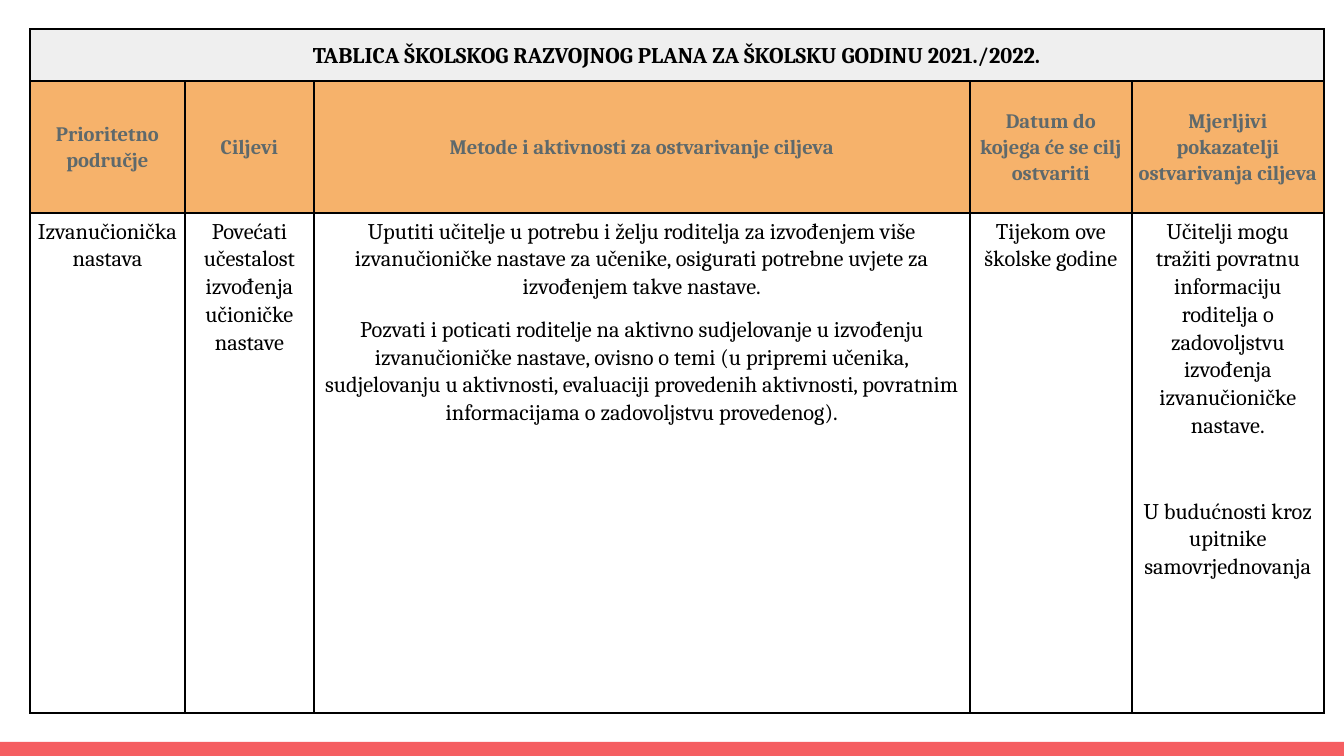
"""Builds a slide with the school development plan table."""
from lxml import etree
from pptx import Presentation
from pptx import util as u
from pptx.dml.color import RGBColor
from pptx.enum import shapes, text
from pptx.oxml import ns

CORAL = RGBColor(0xF5, 0x5E, 0x61)
ORANGE = RGBColor(0xF6, 0xB2, 0x6B)
LIGHT_GREY = RGBColor(0xEF, 0xEF, 0xEF)
SLATE = RGBColor(0x5E, 0x69, 0x6C)
BLACK = RGBColor(0, 0, 0)
WHITE = RGBColor(0xFF, 0xFF, 0xFF)

WIDTH, HEIGHT = 1344, 756
SCALE = u.Inches(10) / WIDTH

COLUMNS = [155, 129, 656, 162, 192]
ROWS = [52, 132, 500]
TITLE = "TABLICA ŠKOLSKOG RAZVOJNOG PLANA ZA ŠKOLSKU GODINU 2021./2022."
HEADINGS = [
    "Prioritetno područje",
    "Ciljevi",
    "Metode i aktivnosti za ostvarivanje ciljeva",
    "Datum do kojega će se cilj ostvariti",
    "Mjerljivi pokazatelji ostvarivanja ciljeva",
]
PLAN = [
    ["Izvanučionička nastava"],
    ["Povećati učestalost izvođenja učioničke nastave"],
    ["Uputiti učitelje u potrebu i želju roditelja za izvođenjem više "
     "izvanučioničke nastave za učenike, osigurati potrebne uvjete za "
     "izvođenjem takve nastave.",
     "Pozvati i poticati roditelje na aktivno sudjelovanje u izvođenju "
     "izvanučioničke nastave, ovisno o temi (u pripremi učenika, "
     "sudjelovanju u aktivnosti, evaluaciji provedenih aktivnosti, povratnim "
     "informacijama o zadovoljstvu provedenog)."],
    ["Tijekom ove školske godine"],
    ["Učitelji mogu tražiti povratnu informaciju roditelja o zadovoljstvu "
     "izvođenja izvanučioničke nastave.",
     "U budućnosti kroz upitnike samovrjednovanja"],
]
PARAGRAPH_GAPS = [8, 8, 8, 8, 31]


def px(length):
    return u.Emu(round(length * SCALE))


class SlideBuilder:
    """Holds the style and the current slide."""

    font = "Cambria"
    line_spacing = 1.08
    space_after = u.Pt(8)
    border_width = u.Pt(1)

    def __init__(self, presentation):
        self.slide = presentation.slides.add_slide(presentation.slide_layouts[6])

    def bar(self, left, top, width, height, color):
        shape = self.slide.shapes.add_shape(
            shapes.MSO_SHAPE.RECTANGLE, px(left), px(top), px(width), px(height))
        shape.shadow.inherit = False
        shape.fill.solid()
        shape.fill.fore_color.rgb = color
        shape.line.fill.background()

    def table(self, left, top, columns, rows):
        table = self.slide.shapes.add_table(
            len(rows), len(columns), px(left), px(top),
            px(sum(columns)), px(sum(rows))).table
        table.first_row = table.horz_banding = False
        for column, width in zip(table.columns, columns):
            column.width = px(width)
        for row, height in zip(table.rows, rows):
            row.height = px(height)
        for cell in table.iter_cells():
            self.borders(cell)
        return table

    def borders(self, cell):
        properties = cell._tc.get_or_add_tcPr()
        for index, side in enumerate(("lnL", "lnR", "lnT", "lnB")):
            line = etree.Element(ns.qn(f"a:{side}"), w=str(self.border_width))
            fill = etree.SubElement(line, ns.qn("a:solidFill"))
            etree.SubElement(fill, ns.qn("a:srgbClr"), val=str(BLACK))
            properties.insert(index, line)

    def cell(self, cell, paragraphs, fill, color=BLACK, size=12, bold=False,
             anchor=text.MSO_ANCHOR.MIDDLE, gap=8):
        cell.fill.solid()
        cell.fill.fore_color.rgb = fill
        cell.vertical_anchor = anchor
        cell.margin_left = cell.margin_right = px(5)
        cell.margin_top = cell.margin_bottom = px(4)
        frame = cell.text_frame
        for index, content in enumerate(paragraphs):
            paragraph = frame.add_paragraph() if index else frame.paragraphs[0]
            paragraph.alignment = text.PP_ALIGN.CENTER
            paragraph.line_spacing = self.line_spacing
            paragraph.space_before = u.Pt(gap if index else 0)
            last = index == len(paragraphs) - 1
            paragraph.space_after = self.space_after if last else u.Pt(0)
            run = paragraph.add_run()
            run.text = content
            run.font.name = self.font
            run.font.size = u.Pt(size)
            run.font.bold = bold
            run.font.color.rgb = color


def main():
    presentation = Presentation()
    presentation.slide_width = px(WIDTH)
    presentation.slide_height = px(HEIGHT)
    builder = SlideBuilder(presentation)

    builder.bar(0, 742, WIDTH, 14, CORAL)
    table = builder.table(30, 29, COLUMNS, ROWS)
    table.cell(0, 0).merge(table.cell(0, len(COLUMNS) - 1))
    builder.cell(table.cell(0, 0), [TITLE], LIGHT_GREY, bold=True)
    for column, heading in enumerate(HEADINGS):
        builder.cell(table.cell(1, column), [heading], ORANGE, SLATE, 11, True)
    for column, (paragraphs, gap) in enumerate(zip(PLAN, PARAGRAPH_GAPS)):
        builder.cell(table.cell(2, column), paragraphs, WHITE,
                     anchor=text.MSO_ANCHOR.TOP, gap=gap)

    presentation.save("out.pptx")


if __name__ == "__main__":
    main()
